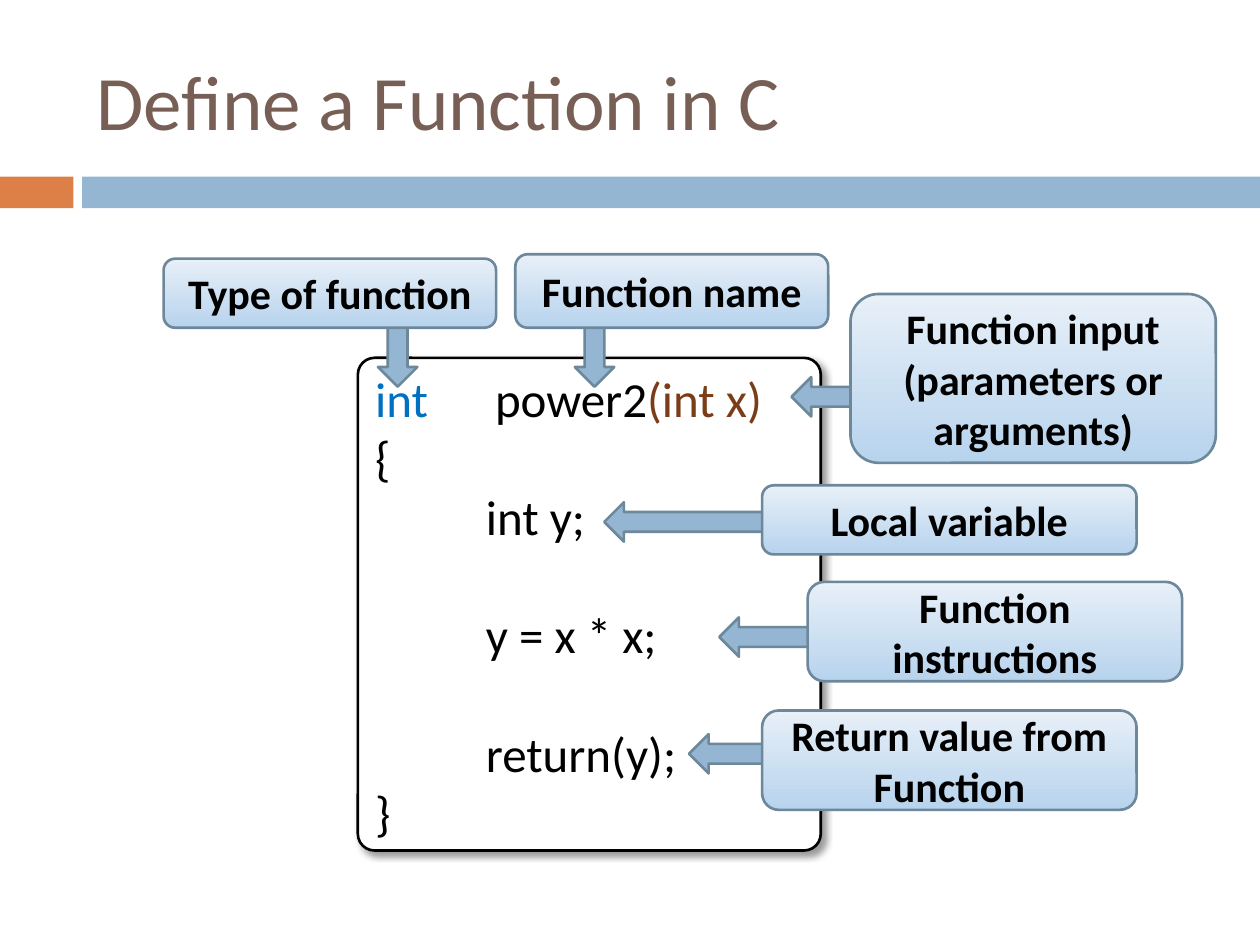
from lxml.etree import SubElement
from pptx import Presentation
from pptx.dml.color import RGBColor
from pptx.enum.shapes import MSO_SHAPE as Shape
from pptx.enum.text import MSO_ANCHOR as Anchor, PP_ALIGN as Align
from pptx.oxml import parse_xml
from pptx.oxml.ns import nsdecls, qn
from pptx.util import Pt

COLORS = {
    "title": "775F55", "orange": "DD8047", "blue": "94B6D2", "edge": "6D879B",
    "dark": "B7D3ED", "light": "E8F0F8", "black": "000000", "white": "FFFFFF",
    "type": "0070C0", "input": "7B3D17",
}
FONT = "Calibri"
TITLE = "Define a Function in C"
BANDS = [((0, 101, 42, 18), "orange"), ((47, 101, 673, 18), "blue")]
CODE_BOX = (204.5, 204.5, 264.5, 281.5)
CODE_SIZE, CODE_LINE, CODE_INDENT, NAME_TAB = 28, 34, 63.3, 68.5
CODE = [
    ([("int", "type"), ("\tpower2", "black"), ("(int x)", "input")], 0, 0),
    ([("{", "black")], 0, 0),
    ([("int y;", "black")], CODE_INDENT, 0),
    ([("y = x * x;", "black")], CODE_INDENT, CODE_LINE),
    ([("return(y);", "black")], CODE_INDENT, CODE_LINE),
    ([("}", "black")], 0, 0),
]
DOWN, LEFT = Shape.DOWN_ARROW, Shape.LEFT_ARROW
CALLOUTS = [
    ("Type of function", (93.5, 147.8, 190, 39.5), DOWN, (216, 181.5, 22.5, 39.5)),
    ("Function name", (294.5, 145.3, 178.8, 42), DOWN, (328.5, 181.5, 22.5, 39.5)),
    ("Function input (parameters or arguments)", (486, 168, 208.8, 96.5),
     LEFT, (452.3, 215.5, 39.5, 22.5)),
    ("Local variable", (435.5, 277.3, 214, 39.5), LEFT, (345.3, 287, 157.5, 22.5)),
    ("Function instructions", (461.5, 332.5, 214, 56.8), LEFT, (411, 352.8, 157.5, 22.5)),
    ("Return value from Function", (435.5, 406, 214, 56.8),
     LEFT, (393.7, 419.5, 157.5, 22.5)),
]


def rgb(name):
    return RGBColor.from_string(COLORS[name])


def style(font, size, color, bold=False):
    font.name, font.size, font.bold = FONT, Pt(size), bold
    font.color.rgb = rgb(color)


def add_box(page, kind, place, fill, line=None):
    box = page.shapes.add_shape(kind, *map(Pt, place))
    box.shadow.inherit = False
    box.fill.solid()
    box.fill.fore_color.rgb = rgb(fill)
    if line:
        box.line.color.rgb = rgb(line)
        box.line.width = Pt(1.5)
    else:
        box.line.fill.background()
    return box


def add_title(page):
    title = page.shapes.title
    title.left, title.top, title.width, title.height = map(Pt, (48, 18, 642, 78))
    frame = title.text_frame
    frame.text = TITLE
    frame.vertical_anchor = Anchor.MIDDLE
    para = frame.paragraphs[0]
    para.alignment = Align.LEFT
    style(para.runs[0].font, 44, "title")


def add_shadow(box):
    effects = box._element.spPr.find(qn("a:effectLst"))
    effects.append(parse_xml(
        f'<a:outerShdw {nsdecls("a")} blurRad="{Pt(4)}" dist="{Pt(3)}" dir="2700000" '
        f'algn="tl" rotWithShape="0"><a:srgbClr val="{COLORS["black"]}">'
        '<a:alpha val="40000"/></a:srgbClr></a:outerShdw>'))


def add_code(page):
    box = add_box(page, Shape.ROUNDED_RECTANGLE, CODE_BOX, "white", "black")
    box.adjustments[0] = 0.036
    add_shadow(box)
    frame = box.text_frame
    frame.vertical_anchor = Anchor.TOP
    for index, (parts, indent, gap) in enumerate(CODE):
        para = frame.add_paragraph() if index else frame.paragraphs[0]
        para.alignment = Align.LEFT
        para.space_before = Pt(gap)
        props = para._p.get_or_add_pPr()
        props.set("marL", str(Pt(indent)))
        if len(parts) > 1:
            tabs = SubElement(props, qn("a:tabLst"))
            SubElement(tabs, qn("a:tab"), pos=str(Pt(NAME_TAB)), algn="l")
        for text, color in parts:
            span = para.add_run()
            span.text = text
            style(span.font, CODE_SIZE, color)


def add_callout(page, text, place, arrow, arrow_place):
    add_box(page, arrow, arrow_place, "blue", "edge")
    box = add_box(page, Shape.ROUNDED_RECTANGLE, place, "light", "edge")
    box.fill.gradient()
    box.fill.gradient_angle = 90
    for stop, color in zip(box.fill.gradient_stops, ("dark", "light")):
        stop.color.rgb = rgb(color)
    frame = box.text_frame
    frame.text = text
    frame.vertical_anchor = Anchor.MIDDLE
    para = frame.paragraphs[0]
    para.alignment = Align.CENTER
    style(para.runs[0].font, 24, "black", True)


def main():
    """Build the slide that labels the parts of a C function."""
    deck = Presentation()
    deck.slide_width, deck.slide_height = Pt(720), Pt(540)
    page = deck.slides.add_slide(deck.slide_layouts[5])
    add_title(page)
    for place, color in BANDS:
        add_box(page, Shape.RECTANGLE, place, color)
    add_code(page)
    for callout in CALLOUTS:
        add_callout(page, *callout)
    deck.save("out.pptx")


if __name__ == "__main__":
    main()
